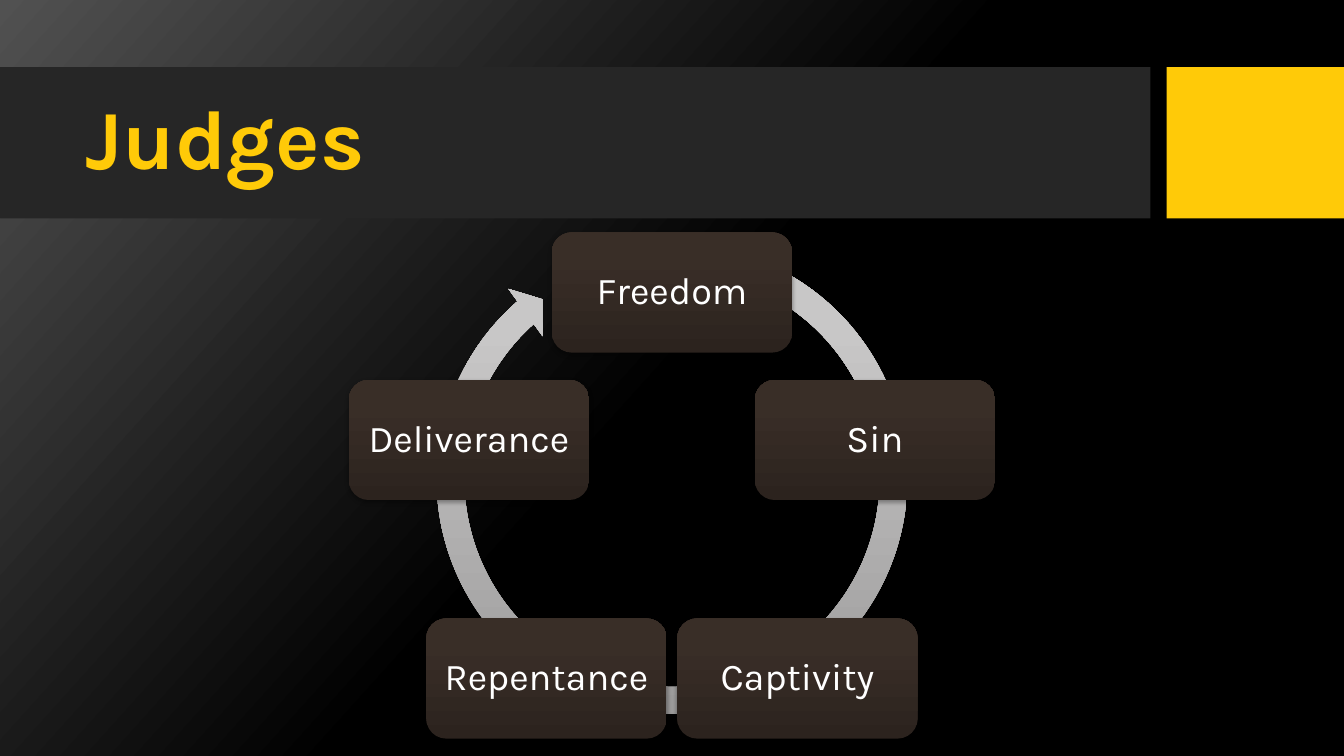
import math
from dataclasses import dataclass

import pptx
import pptx.dml.color
import pptx.enum.shapes
import pptx.enum.text
import pptx.oxml
import pptx.oxml.ns
import pptx.util

WIDE, HIGH = 13.33, 7.5
KIND = pptx.enum.shapes.MSO_SHAPE
ALIGN = pptx.enum.text.PP_ALIGN
STEPS = ["Freedom", "Sin", "Captivity", "Repentance", "Deliverance"]


@dataclass(frozen=True)
class Theme:
    font: str = "Karla"
    gold: str = "FFCA08"
    band: str = "262626"
    white: str = "FFFFFF"
    title: int = 60
    label: int = 27
    # Gradient stops: percent and colour
    back: tuple = ((0, "515151"), (50, "000000"), (100, "000000"))
    ring: tuple = ((0, "9A9999"), (80, "C8C7C7"), (100, "C9C8C8"))
    node: tuple = ((0, "2C231E"), (80, "392E27"), (100, "3A2E26"))


THEME = Theme()


def rgb(code):
    return pptx.dml.color.RGBColor.from_string(code)


def tag(text):
    """Parse a drawing element, adding the namespace."""
    name, rest = text.split(" ", 1)
    return pptx.oxml.parse_xml(f"{name} {pptx.oxml.ns.nsdecls('a')} {rest}")


def shade(fill, owner, stops, angle):
    """Give a fill a linear gradient, angle clockwise."""
    fill.gradient()
    fill.gradient_angle = 360 - angle
    row = owner.find(".//" + pptx.oxml.ns.qn("a:gsLst"))
    for old in list(row):
        row.remove(old)
    for pos, code in stops:
        row.append(tag(f'<a:gs pos="{pos * 1000}"><a:srgbClr val="{code}"/></a:gs>'))


def place(shape, box):
    shape.left, shape.top, shape.width, shape.height = map(pptx.util.Inches, box)


def draw(slide, kind, box, fill):
    """Add a plain shape with a solid colour or a vertical gradient."""
    shape = slide.shapes.add_shape(kind, *map(pptx.util.Inches, box))
    shape.shadow.inherit = False
    shape.line.fill.background()
    if isinstance(fill, str):
        shape.fill.solid()
        shape.fill.fore_color.rgb = rgb(fill)
    else:
        shade(shape.fill, shape.element.spPr, fill, 270)
    return shape


def write(shape, text, size, color, bold=False, align=ALIGN.CENTER, inset=0.1):
    frame = shape.text_frame
    frame.text = text
    frame.word_wrap = True
    frame.auto_size = pptx.enum.text.MSO_AUTO_SIZE.NONE
    frame.vertical_anchor = pptx.enum.text.MSO_ANCHOR.MIDDLE
    frame.margin_left = frame.margin_right = pptx.util.Inches(inset)
    para = frame.paragraphs[0]
    para.alignment, para.line_spacing = align, 0.9
    font = para.runs[0].font
    font.name, font.size, font.bold = THEME.font, pptx.util.Pt(size), bold
    font.color.rgb = rgb(color)


def header(slide, box, text):
    """Dark band, gold block at the right, and the title on the band."""
    x, y, w, h = box
    band, block = 0.856 * w, 0.132 * w
    draw(slide, KIND.RECTANGLE, (x, y, band, h), THEME.band)
    draw(slide, KIND.RECTANGLE, (x + w - block, y, block, h), THEME.gold)
    title = slide.shapes.title
    place(title, (x + 0.056 * w, y + 0.1 * h, 0.788 * w, 0.79 * h))
    write(title, text, THEME.title, THEME.gold, bold=True, align=ALIGN.LEFT)
    slide.shapes.element.append(title.element)  # bring to front


def node(slide, box, text):
    """Rounded box with a soft shadow and a label."""
    shape = draw(slide, KIND.ROUNDED_RECTANGLE, box, THEME.node)
    glow = shape.element.spPr.find(pptx.oxml.ns.qn("a:effectLst"))
    glow.append(tag(
        '<a:outerShdw blurRad="39370" dist="22860" dir="5400000" rotWithShape="0">'
        '<a:srgbClr val="000000"><a:alpha val="35000"/></a:srgbClr></a:outerShdw>'))
    write(shape, text, THEME.label, THEME.white, inset=0.05)


def cycle(slide, box, steps):
    """Ring arrow with the steps spaced evenly around a circle."""
    x, y, w, h = box
    mid = x + w / 2
    # Ring
    side = 0.982 * h
    ring = draw(slide, KIND.CIRCULAR_ARROW, (mid - side / 2, y, side, side), THEME.ring)
    for i, value in enumerate((0.055, 3.307, 137.194, 174.205, 0.058)):
        ring.adjustments[i] = value
    # Steps: the circle fills the width and rests on the foot of the box
    wide = 0.372 * w
    high = wide / 2
    turn = math.tau / len(steps)
    radius = (w - wide) / 2 / math.sin(turn)
    hub = y + h - high / 2 - radius * math.cos(turn / 2)
    for i, text in enumerate(steps):
        left = mid + radius * math.sin(i * turn) - wide / 2
        top = hub - radius * math.cos(i * turn) - high / 2
        node(slide, (left, top, wide, high), text)


def main():
    deck = pptx.Presentation()
    deck.slide_width = pptx.util.Inches(WIDE)
    deck.slide_height = pptx.util.Inches(HIGH)
    slide = deck.slides.add_slide(deck.slide_layouts.get_by_name("Title Only"))
    shade(slide.background.fill, slide.element, THEME.back, 42)
    header(slide, (0, 0.089 * HIGH, WIDE, 0.2 * HIGH), "Judges")
    share = 0.481  # the cycle is centred across the slide
    left = (1 - share) / 2 * WIDE
    cycle(slide, (left, 0.302 * HIGH, share * WIDE, 0.675 * HIGH), STEPS)
    deck.save("out.pptx")


if __name__ == "__main__":
    main()
